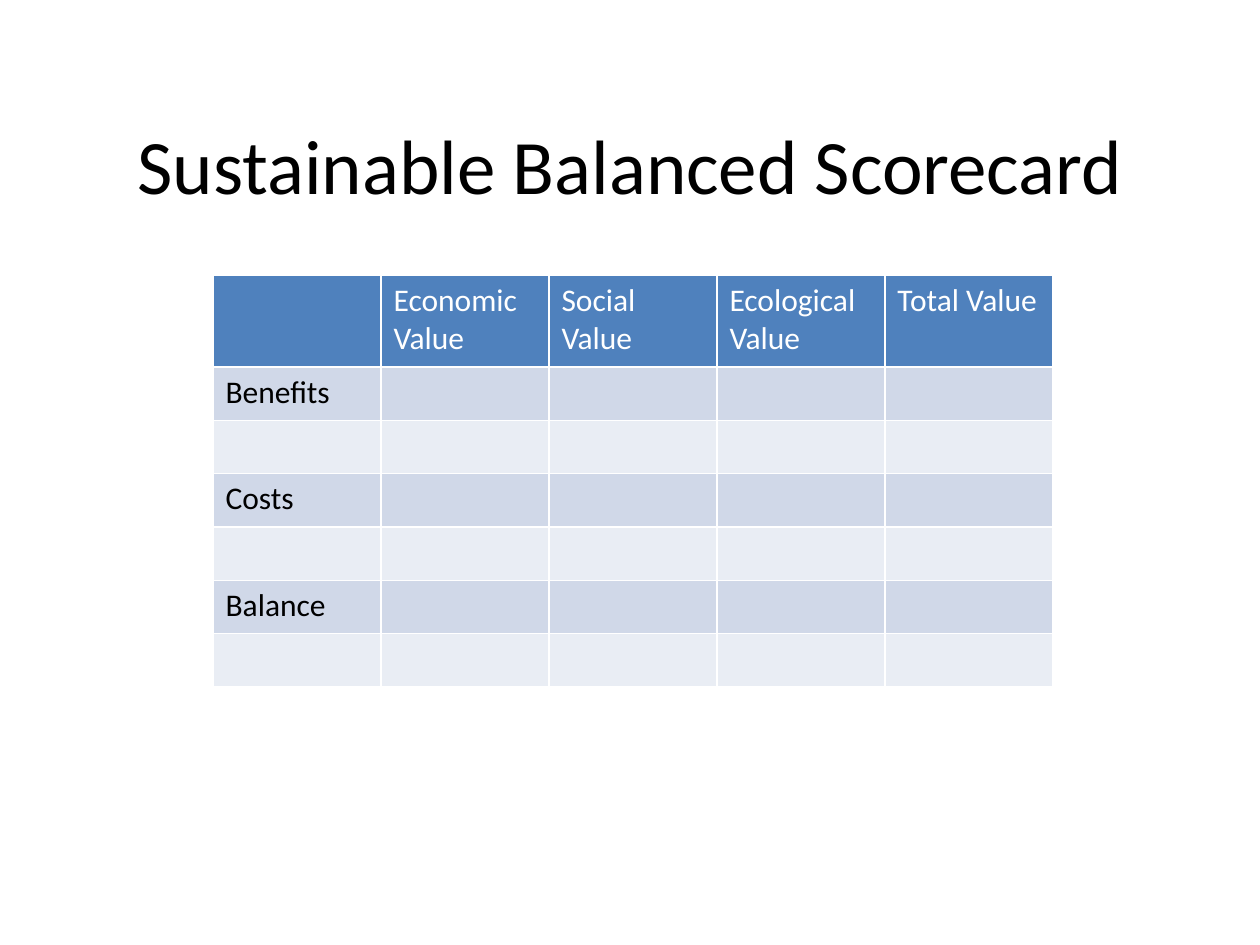
from pptx import Presentation
from pptx.dml.color import RGBColor
from pptx.enum.text import MSO_ANCHOR, PP_ALIGN
from pptx.util import Emu, Pt

CENTER = PP_ALIGN.CENTER
MIDDLE = MSO_ANCHOR.MIDDLE

BLACK = RGBColor(0x00, 0x00, 0x00)
WHITE = RGBColor(0xFF, 0xFF, 0xFF)
HEADER_BLUE = RGBColor(0x4F, 0x81, 0xBD)
BAND_DARK = RGBColor(0xD0, 0xD8, 0xE8)
BAND_LIGHT = RGBColor(0xE9, 0xED, 0xF4)

PX_PER_INCH = 126
TITLE_ONLY = 5


def px(length):
    return Emu(round(length * 914400 / PX_PER_INCH))


class ScorecardSlide:
    font_name = "Calibri"
    title_size = Pt(44)
    table_size = Pt(18)

    def __init__(self, presentation):
        self.slide = presentation.slides.add_slide(presentation.slide_layouts[TITLE_ONLY])

    def format_text(self, frame, size, color):
        for paragraph in frame.paragraphs:
            for run in paragraph.runs:
                run.font.name = self.font_name
                run.font.size = size
                run.font.bold = False
                run.font.color.rgb = color

    def title(self, text, left, top, width, height, top_inset):
        heading = self.slide.shapes.title
        heading.left, heading.top = px(left), px(top)
        heading.width, heading.height = px(width), px(height)
        frame = heading.text_frame
        frame.text = text
        frame.margin_top = px(top_inset)
        frame.vertical_anchor = MIDDLE
        frame.paragraphs[0].alignment = CENTER
        self.format_text(frame, self.title_size, BLACK)

    def table(self, rows, left, top, width, header_height, body_height):
        # The default table style supplies the white cell borders
        scorecard = self.slide.shapes.add_table(
            len(rows), len(rows[0]), px(left), px(top),
            px(width), px(header_height + body_height)).table
        for row in scorecard.rows:
            row.height = px(body_height / (len(rows) - 1))
        scorecard.rows[0].height = px(header_height)

        for row_index, row_texts in enumerate(rows):
            if row_index == 0:
                fill, color = HEADER_BLUE, WHITE
            else:
                fill, color = (BAND_DARK if row_index % 2 else BAND_LIGHT), BLACK
            for column_index, text in enumerate(row_texts):
                cell = scorecard.cell(row_index, column_index)
                cell.fill.solid()
                cell.fill.fore_color.rgb = fill
                if text:
                    cell.text_frame.text = text
                    self.format_text(cell.text_frame, self.table_size, color)


def main():
    presentation = Presentation()
    presentation.slide_width = px(1260)
    presentation.slide_height = px(945)
    slide = ScorecardSlide(presentation)

    # Title, set low in its box
    slide.title("Sustainable Balanced Scorecard", 95, 0, 1071, 233, top_inset=100)

    # Scorecard: each category is followed by an empty row
    values = ["", "Economic Value", "Social Value", "Ecological Value", "Total Value"]
    rows = [values]
    for category in ("Benefits", "Costs", "Balance"):
        rows.append([category] + [""] * (len(values) - 1))
        rows.append([""] * len(values))
    slide.table(rows, 213, 275, 840, header_height=92, body_height=320)

    presentation.save("out.pptx")


if __name__ == "__main__":
    main()
